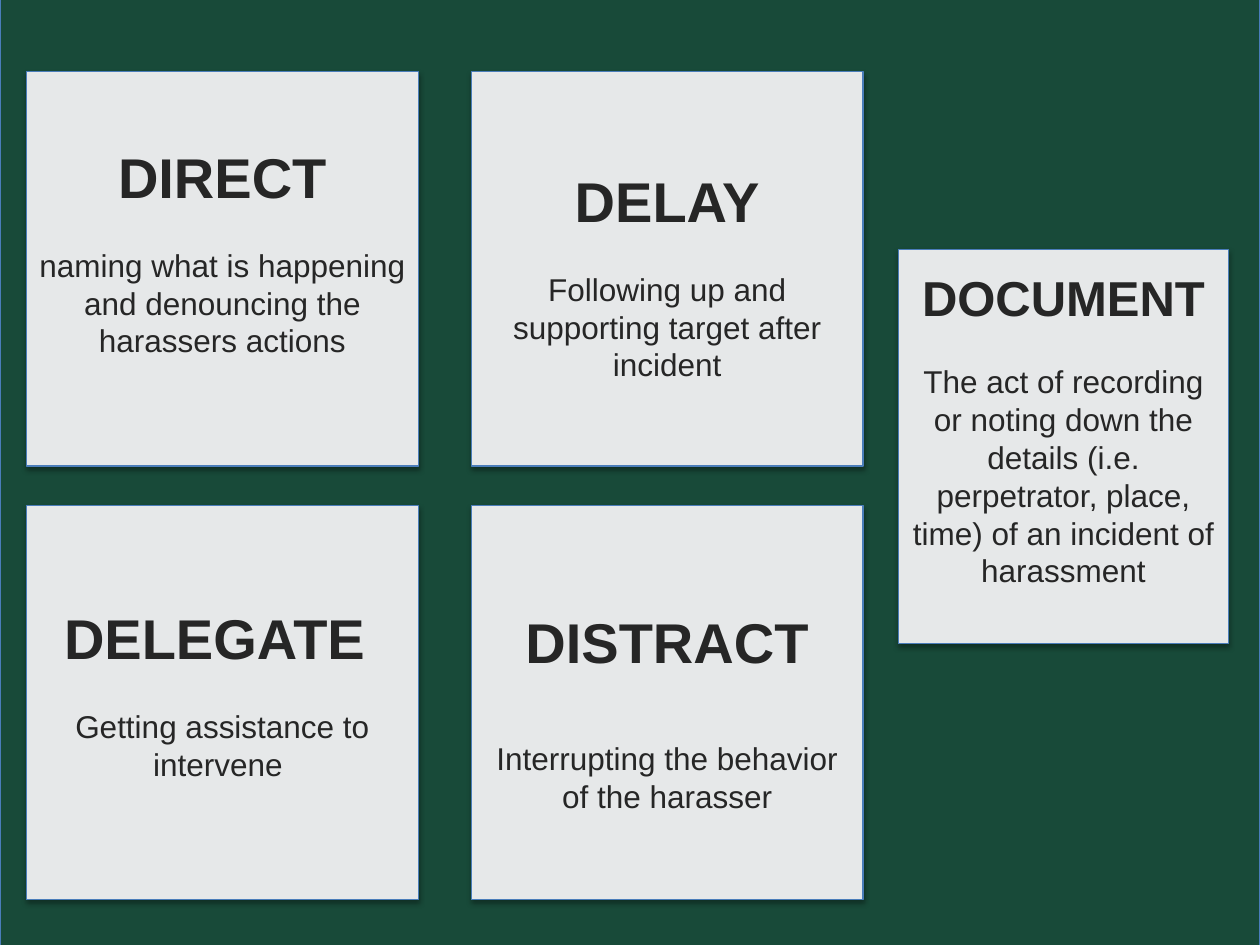
from lxml import etree
from pptx import Presentation
from pptx.dml.color import RGBColor
from pptx.enum.shapes import MSO_SHAPE
from pptx.enum.text import MSO_ANCHOR, PP_ALIGN
from pptx.oxml.ns import qn
from pptx.util import Inches, Pt

GREEN = RGBColor(0x18, 0x4A, 0x39)
PALE = RGBColor(0xE6, 0xE8, 0xE9)
BLUE = RGBColor(0x4A, 0x7D, 0xBA)
INK = RGBColor(0x26, 0x26, 0x26)

# Card grid, in inches
LEFT, TOP = 0.21, 0.57
COLUMN_STEP, ROW_STEP = 3.53, 3.44
CARD_W, CARD_H = 3.11, 3.13
BODY_SIZE = 18
LINE_RATIO = 1.15  # height of an Arial line relative to its size

# column, row, heading, body, text offset, text height, gap above body as a line size
CARDS = [
    (0, 0, "DIRECT", "naming what is happening and denouncing the harassers actions", 0, 2.69, 18),
    (0, 1, "DELEGATE ", "Getting assistance to intervene ", 0.22, 2.09, 18),
    (1, 1, "DISTRACT", "Interrupting the behavior of the harasser", 0.25, 2.32, 32),
    (1, 0, "DELAY", "Following up and supporting target after incident", 0.19, 2.39, 18),
]
DOCUMENT_BODY = ("The act of recording or noting down the details (i.e. perpetrator, "
                 "place, time) of an incident of harassment")


def add_shadow(panel):
    """Soft shadow straight below the panel."""
    panel.shadow.inherit = False
    effects = panel._element.spPr.find(qn("a:effectLst"))
    shadow = etree.SubElement(effects, qn("a:outerShdw"), blurRad=str(Pt(3.1)),
                              dist=str(Pt(1.8)), dir="5400000", rotWithShape="0")
    colour = etree.SubElement(shadow, qn("a:srgbClr"), val="000000")
    etree.SubElement(colour, qn("a:alpha"), val="35000")


def add_panel(slide, box, fill):
    panel = slide.shapes.add_shape(MSO_SHAPE.RECTANGLE, *map(Inches, box))
    panel.fill.solid()
    panel.fill.fore_color.rgb = fill
    panel.line.color.rgb = BLUE
    panel.line.width = Pt(0.75)
    add_shadow(panel)
    return panel


def write_text(frame, heading, heading_size, body, gap_size, margins, anchor):
    """Bold heading over a plain description, both centred."""
    layout = {"word_wrap": True, "vertical_anchor": anchor,
              "margin_left": Inches(0.1), "margin_right": Inches(0.1),
              "margin_top": Inches(margins[0]), "margin_bottom": Inches(margins[1])}
    for name, value in layout.items():
        setattr(frame, name, value)
    description_gap = gap_size * LINE_RATIO
    parts = [(frame.paragraphs[0], heading, heading_size, True, 0),
             (frame.add_paragraph(), body, BODY_SIZE, False, description_gap)]
    for paragraph, words, size, bold, gap in parts:
        paragraph.alignment = PP_ALIGN.CENTER
        paragraph.space_before = Pt(gap)
        run = paragraph.add_run()
        run.text = words
        for name, value in {"name": "Arial", "size": Pt(size), "bold": bold}.items():
            setattr(run.font, name, value)
        run.font.color.rgb = INK


def add_card(slide, box, heading, body, offset, text_height, gap_size):
    """Grid card with its text box laid over the panel."""
    left, top, width, _ = box
    add_panel(slide, box, PALE)
    caption = slide.shapes.add_textbox(
        *map(Inches, (left, top + offset, width, text_height)))
    write_text(caption.text_frame, heading, 32, body, gap_size, (0.56, 0.05), MSO_ANCHOR.TOP)


def add_document_card(slide, box):
    """Side card that holds its own text."""
    panel = add_panel(slide, box, PALE)
    write_text(panel.text_frame, "DOCUMENT", 28, DOCUMENT_BODY, BODY_SIZE,
               (0.05, 0.34), MSO_ANCHOR.MIDDLE)


def main():
    deck = Presentation()
    deck.slide_width, deck.slide_height = Inches(10), Inches(7.5)
    slide = deck.slides.add_slide(deck.slide_layouts[6])

    # Green backdrop
    add_panel(slide, (0, -0.06, 10, 7.63), GREEN)

    # Two by two grid of cards
    for column, row, *content in CARDS:
        box = (LEFT + column * COLUMN_STEP, TOP + row * ROW_STEP, CARD_W, CARD_H)
        add_card(slide, box, *content)

    # Fifth card at the right
    add_document_card(slide, (7.13, 1.98, 2.62, CARD_H))
    deck.save("out.pptx")


if __name__ == "__main__":
    main()
